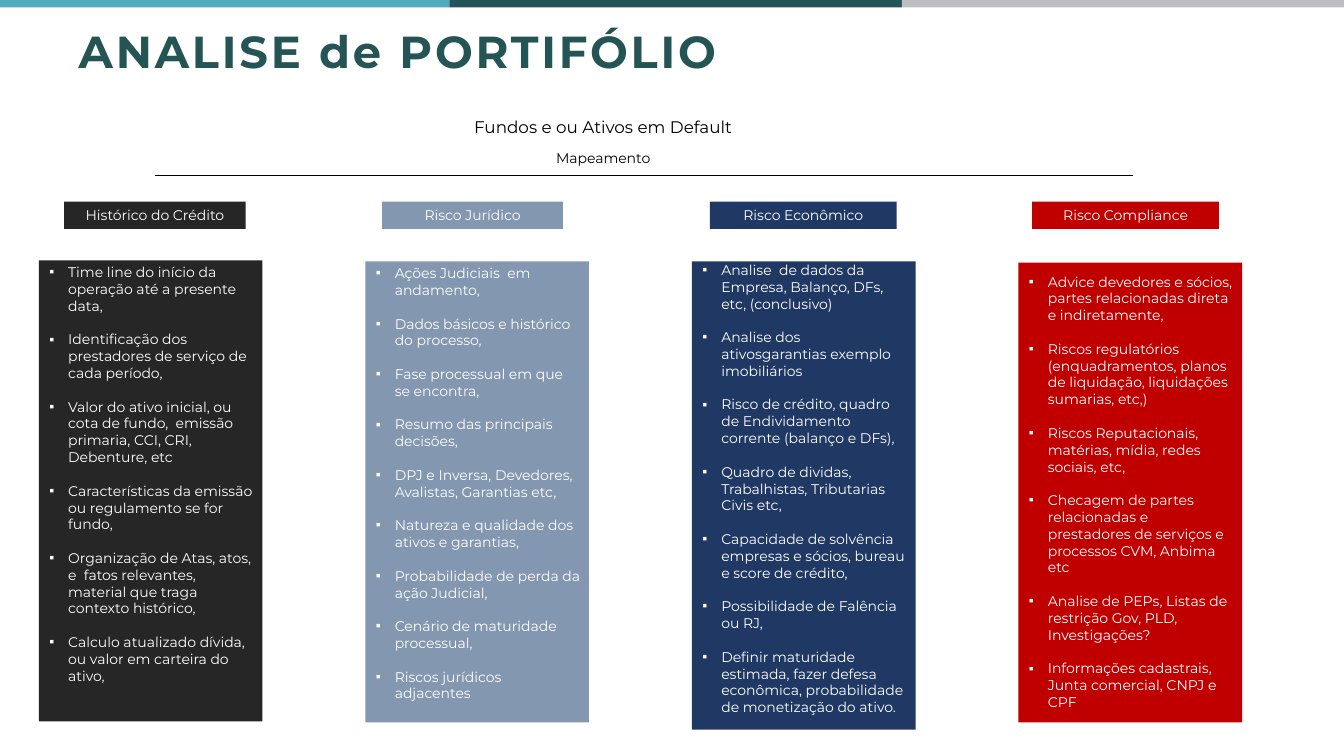
from dataclasses import dataclass

import lxml.etree
import pptx
import pptx.dml.color
import pptx.enum.shapes
import pptx.enum.text
import pptx.oxml.ns
import pptx.util

RGBColor = pptx.dml.color.RGBColor
MSO_SHAPE = pptx.enum.shapes.MSO_SHAPE
PP_ALIGN = pptx.enum.text.PP_ALIGN
MSO_ANCHOR = pptx.enum.text.MSO_ANCHOR
qn = pptx.oxml.ns.qn

PX = 9525  # EMU per px, 96 px to the inch
FONT = "Montserrat"
WHITE = RGBColor(0xFF, 0xFF, 0xFF)
BLACK = RGBColor(0x00, 0x00, 0x00)
TEAL = RGBColor(0x4E, 0xAC, 0xBD)
DARK_TEAL = RGBColor(0x25, 0x53, 0x5A)
GREY = RGBColor(0xBC, 0xBE, 0xC0)
TITLE = RGBColor(0x25, 0x54, 0x54)
CHARCOAL = RGBColor(0x26, 0x26, 0x26)
STEEL = RGBColor(0x84, 0x97, 0xB0)
NAVY = RGBColor(0x20, 0x38, 0x64)
RED = RGBColor(0xC0, 0x00, 0x00)

BAR_W, BAR_H, BLEED = 431, 10, 3
HEADER_Y, HEADER_H = 192, 26
BODY_W, BODY_LEFT, BODY_RIGHT, BULLET_INDENT = 213, 10, 8, 18


@dataclass(frozen=True)
class Box:
    x: int
    y: int
    w: int
    h: int

    def emu(self) -> tuple[int, int, int, int]:
        return self.x * PX, self.y * PX, self.w * PX, self.h * PX


@dataclass(frozen=True)
class Column:
    header: str
    color: RGBColor
    header_x: int
    header_w: int
    body: Box
    text_top: int
    items: tuple[str, ...]


COLUMNS = (
    Column("Histórico do Crédito", CHARCOAL, 61, 173, Box(37, 248, BODY_W, 439), 3, (
        "Time line do início da operação até a presente data,",
        "Identificação dos prestadores de serviço de cada período,",
        "Valor do ativo inicial, ou cota de fundo,  emissão primaria, CCI, CRI, Debenture, etc",
        "Características da emissão ou regulamento se for fundo,",
        "Organização de Atas, atos, e  fatos relevantes, material que traga contexto histórico,",
        "Calculo atualizado dívida, ou valor em carteira do ativo,",
    )),
    Column("Risco Jurídico", STEEL, 364, 172, Box(348, 249, BODY_W, 439), 3, (
        "Ações Judiciais  em andamento,",
        "Dados básicos e histórico do processo,",
        "Fase processual em que se encontra,",
        "Resumo das principais decisões,",
        "DPJ e Inversa, Devedores, Avalistas, Garantias etc,",
        "Natureza e qualidade dos ativos e garantias,",
        "Probabilidade de perda da ação Judicial,",
        "Cenário de maturidade processual,",
        "Riscos jurídicos adjacentes",
    )),
    Column("Risco Econômico", NAVY, 676, 178, Box(659, 249, BODY_W, 446), 0, (
        "Analise  de dados da Empresa, Balanço, DFs, etc, (conclusivo)",
        "Analise dos ativosgarantias exemplo imobiliários",
        "Risco de crédito, quadro de Endividamento corrente (balanço e DFs),",
        "Quadro de dividas, Trabalhistas, Tributarias Civis etc,",
        "Capacidade de solvência empresas e sócios, bureau e score de crédito,",
        "Possibilidade de Falência ou RJ,",
        "Definir maturidade estimada, fazer defesa econômica, probabilidade de monetização do ativo.",
    )),
    Column("Risco Compliance", RED, 983, 178, Box(970, 250, BODY_W, 438), 10, (
        "Advice devedores e sócios, partes relacionadas direta e indiretamente,",
        "Riscos regulatórios (enquadramentos, planos de liquidação, liquidações sumarias, etc,)",
        "Riscos Reputacionais, matérias, mídia, redes sociais, etc,",
        "Checagem de partes relacionadas e prestadores de serviços e processos CVM, Anbima etc",
        "Analise de PEPs, Listas de restrição Gov, PLD, Investigações?",
        "Informações cadastrais, Junta comercial, CNPJ e CPF",
    )),
)


def add_rect(s, box: Box, color: RGBColor):
    sp = s.shapes.add_shape(MSO_SHAPE.RECTANGLE, *box.emu())
    sp.shadow.inherit = False
    sp.fill.solid()
    sp.fill.fore_color.rgb = color
    sp.line.fill.background()
    return sp


def style(p, size: int, color: RGBColor, align=PP_ALIGN.LEFT) -> None:
    p.alignment = align
    p.font.name = FONT
    p.font.size = pptx.util.Pt(size)
    p.font.color.rgb = color


def set_frame(tf, anchor, left: int, top: int, right: int, bottom: int) -> None:
    tf.word_wrap = True
    tf.vertical_anchor = anchor
    tf.margin_left, tf.margin_right = left * PX, right * PX
    tf.margin_top, tf.margin_bottom = top * PX, bottom * PX


def write_label(sp, text: str, size: int, color: RGBColor, align=PP_ALIGN.CENTER, side: int = 5):
    set_frame(sp.text_frame, MSO_ANCHOR.MIDDLE, side, 5, side, 5)
    p = sp.text_frame.paragraphs[0]
    style(p, size, color, align)
    r = p.add_run()
    r.text = text
    return p, r


def add_bullet(p) -> None:
    pPr = p._p.get_or_add_pPr()
    pPr.set("marL", str(BULLET_INDENT * PX))
    pPr.set("indent", str(-BULLET_INDENT * PX))
    defaults = pPr.find(qn("a:defRPr"))
    defaults.addprevious(lxml.etree.Element(qn("a:buFont"), typeface="Arial"))
    defaults.addprevious(lxml.etree.Element(qn("a:buChar"), char="▪"))


def add_column(s, col: Column) -> None:
    header = add_rect(s, Box(col.header_x, HEADER_Y, col.header_w, HEADER_H), col.color)
    write_label(header, col.header, 10, WHITE)
    tf = add_rect(s, col.body, col.color).text_frame
    set_frame(tf, MSO_ANCHOR.TOP, BODY_LEFT, col.text_top, BODY_RIGHT, 0)
    for i, item in enumerate(col.items):
        p = tf.add_paragraph() if i else tf.paragraphs[0]
        style(p, 10, WHITE)
        p.space_after = pptx.util.Pt(12)
        add_bullet(p)
        p.add_run().text = item


def main() -> None:
    prs = pptx.Presentation()
    prs.slide_width, prs.slide_height = 1280 * PX, 720 * PX
    s = prs.slides.add_slide(prs.slide_layouts[6])

    # Top colour band
    for i, color in enumerate((TEAL, DARK_TEAL, GREY)):
        add_rect(s, Box(i * BAR_W - BLEED, -BLEED, BAR_W, BAR_H), color)

    # Title
    title = s.shapes.add_textbox(*Box(65, 17, 750, 62).emu())
    p, r = write_label(title, "ANALISE de PORTIFÓLIO", 32, TITLE, PP_ALIGN.LEFT, 10)
    p.font.bold = True
    r._r.get_or_add_rPr().set("spc", "200")

    # Subtitles and rule
    subtitle = s.shapes.add_textbox(*Box(384, 106, 381, 29).emu())
    write_label(subtitle, "Fundos e ou Ativos em Default", 12, BLACK)
    mapping = s.shapes.add_textbox(*Box(315, 137, 519, 26).emu())
    write_label(mapping, "Mapeamento", 10, BLACK)
    rule = s.shapes.add_connector(
        pptx.enum.shapes.MSO_CONNECTOR.STRAIGHT, 148 * PX, 167 * PX, 1079 * PX, 167 * PX)
    rule.line.color.rgb = BLACK
    rule.line.width = pptx.util.Pt(0.5)
    lxml.etree.SubElement(rule._element.spPr, qn("a:effectLst"))

    # Risk columns
    for col in COLUMNS:
        add_column(s, col)

    prs.save("out.pptx")


if __name__ == "__main__":
    main()
